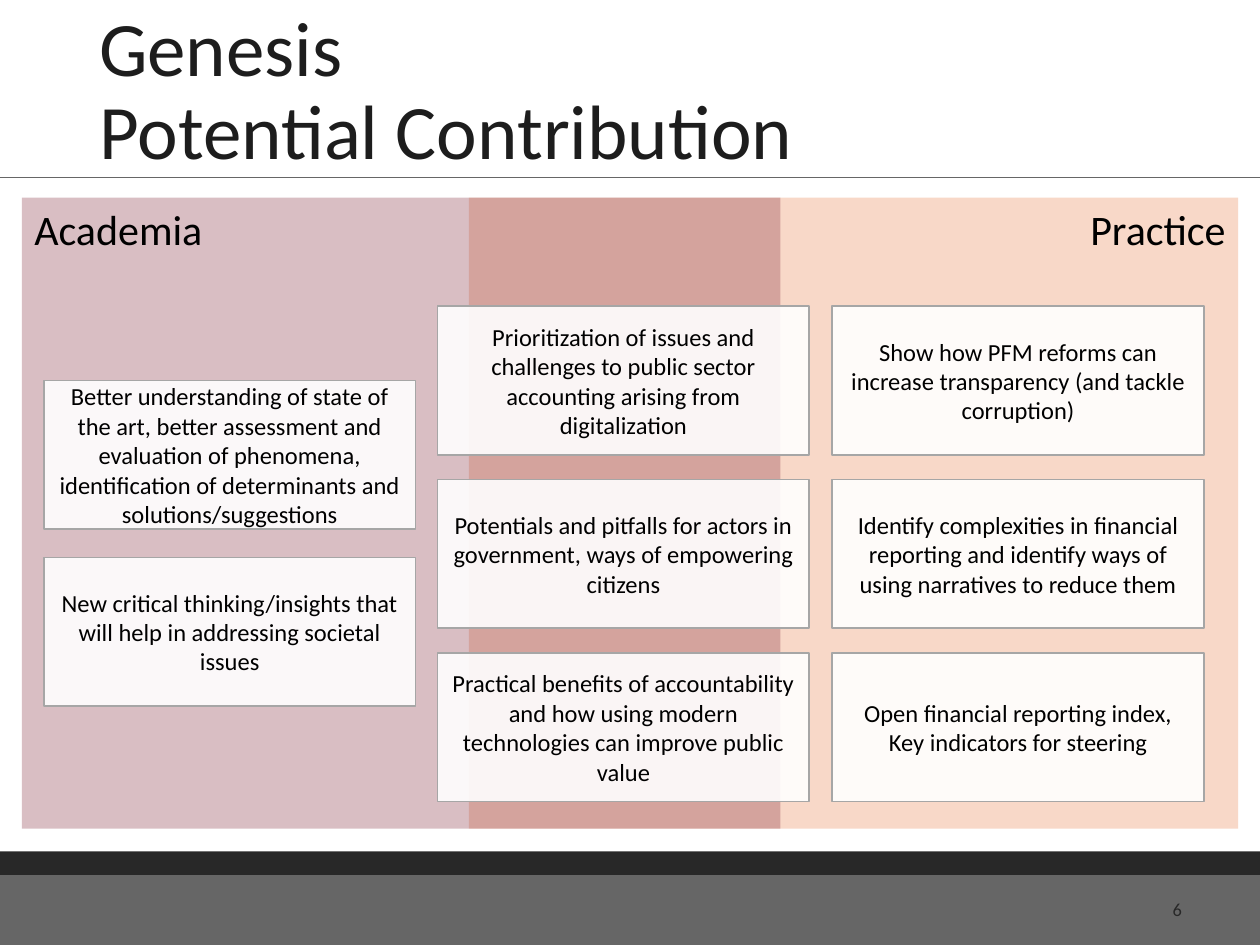
from lxml import etree
from pptx import Presentation
from pptx.dml.color import RGBColor
from pptx.enum.shapes import MSO_CONNECTOR, MSO_SHAPE
from pptx.enum.text import MSO_ANCHOR, MSO_AUTO_SIZE, PP_ALIGN
from pptx.oxml.ns import qn
from pptx.util import Pt

LEFT, CENTER, RIGHT = PP_ALIGN.LEFT, PP_ALIGN.CENTER, PP_ALIGN.RIGHT
TOP, MIDDLE = MSO_ANCHOR.TOP, MSO_ANCHOR.MIDDLE
RECTANGLE = MSO_SHAPE.RECTANGLE
STRAIGHT = MSO_CONNECTOR.STRAIGHT
NO_AUTOFIT = MSO_AUTO_SIZE.NONE

FONT = "Calibri"
COLORS = {
    "footer": "666666",
    "band": "282828",
    "title": "1D1D1D",
    "text": "000000",
    "academia": "82293B",
    "practice": "EA7E4B",
    "card": "FFFFFF",
    "card_line": "A6A6A6",
}

CARD_WIDTH, CARD_HEIGHT = 212.5, 85
# Each column: left, top of first card, distance between tops, card texts
COLUMNS = [
    (12.5, 104.5, 101, [
        "Better understanding of state of the art, better assessment and evaluation "
        "of phenomena, identification of determinants and solutions/suggestions",
        "New critical thinking/insights that will help in addressing societal issues",
    ]),
    (237.5, 62, 99, [
        "Prioritization of issues and challenges to public sector accounting arising "
        "from digitalization",
        "Potentials and pitfalls for actors in government, ways of empowering citizens",
        "Practical benefits of accountability and how using modern technologies can "
        "improve public value",
    ]),
    (463, 62, 99, [
        "Show how PFM reforms can increase transparency (and tackle corruption)",
        "Identify complexities in financial reporting and identify ways of using "
        "narratives to reduce them",
        "Open financial reporting index,\nKey indicators for steering",
    ]),
]


def rgb(name):
    return RGBColor.from_string(COLORS[name])


def write(shape, text, size, color, align, anchor):
    frame = shape.text_frame
    frame.word_wrap = True
    frame.auto_size = NO_AUTOFIT
    frame.vertical_anchor = anchor
    frame.text = text
    for para in frame.paragraphs:
        para.alignment = align
        para.font.name = FONT
        para.font.size = Pt(size)
        para.font.color.rgb = rgb(color)


def add_box(page, box, fill, opacity=100, line=None):
    shape = page.shapes.add_shape(RECTANGLE, *map(Pt, box))
    shape.shadow.inherit = False
    shape.fill.solid()
    shape.fill.fore_color.rgb = rgb(fill)
    if opacity < 100:
        color = shape.fill._xPr.find(".//" + qn("a:srgbClr"))
        etree.SubElement(color, qn("a:alpha"), val=str(opacity * 1000))
    if line:
        shape.line.color.rgb = rgb(line)
        shape.line.width = Pt(1)
    else:
        shape.line.fill.background()
    return shape


def add_footer(page, box, number):
    left, top, width, height = box
    band = 13.5
    add_box(page, (left, top + band, width, height - band), "footer")
    add_box(page, (left, top, width, band), "band")
    label = page.shapes.add_textbox(
        Pt(left + 520.5), Pt(top + 23), Pt(162), Pt(20))
    write(label, number, 10.5, "band", RIGHT, MIDDLE)


def add_title(page, box, text):
    left, top, width, height = box
    title = page.shapes.title
    title.left, title.top, title.width, title.height = map(
        Pt, (left + 49.5, top + 1, width - 99, height))
    write(title, text, 44, "title", LEFT, MIDDLE)
    title.text_frame.paragraphs[0].line_spacing = 0.9

    # Rule below the title
    rule_top = Pt(top + 101.5)
    rule = page.shapes.add_connector(
        STRAIGHT, Pt(left), rule_top, Pt(left + width), rule_top)
    rule.line.color.rgb = rgb("footer")
    rule.line.width = Pt(0.5)
    etree.SubElement(rule._element.spPr, qn("a:effectLst"))


def add_contributions(page, box):
    left, top, width, height = box

    # Two overlapping fields
    practice = add_box(page, (left + 255.5, top, width - 255.5, height), "practice", 30)
    write(practice, "Practice", 24, "text", RIGHT, TOP)
    academia = add_box(page, (left, top, 433.5, height), "academia", 30)
    write(academia, "Academia", 24, "text", LEFT, TOP)

    # Columns of cards
    for column_left, first_top, pitch, texts in COLUMNS:
        for row, text in enumerate(texts):
            card_box = (left + column_left, top + first_top + row * pitch,
                        CARD_WIDTH, CARD_HEIGHT)
            card = add_box(page, card_box, "card", 90, "card_line")
            write(card, text, 14, "text", CENTER, MIDDLE)


def main():
    deck = Presentation()
    deck.slide_width, deck.slide_height = Pt(720), Pt(540)
    page = deck.slides.add_slide(deck.slide_layouts[5])
    add_footer(page, (0, 486.5, 720, 53.5), "6")
    add_title(page, (0, 0, 720, 104), "Genesis\vPotential Contribution")
    add_contributions(page, (12.5, 113, 695, 360.5))
    deck.save("out.pptx")


if __name__ == "__main__":
    main()
